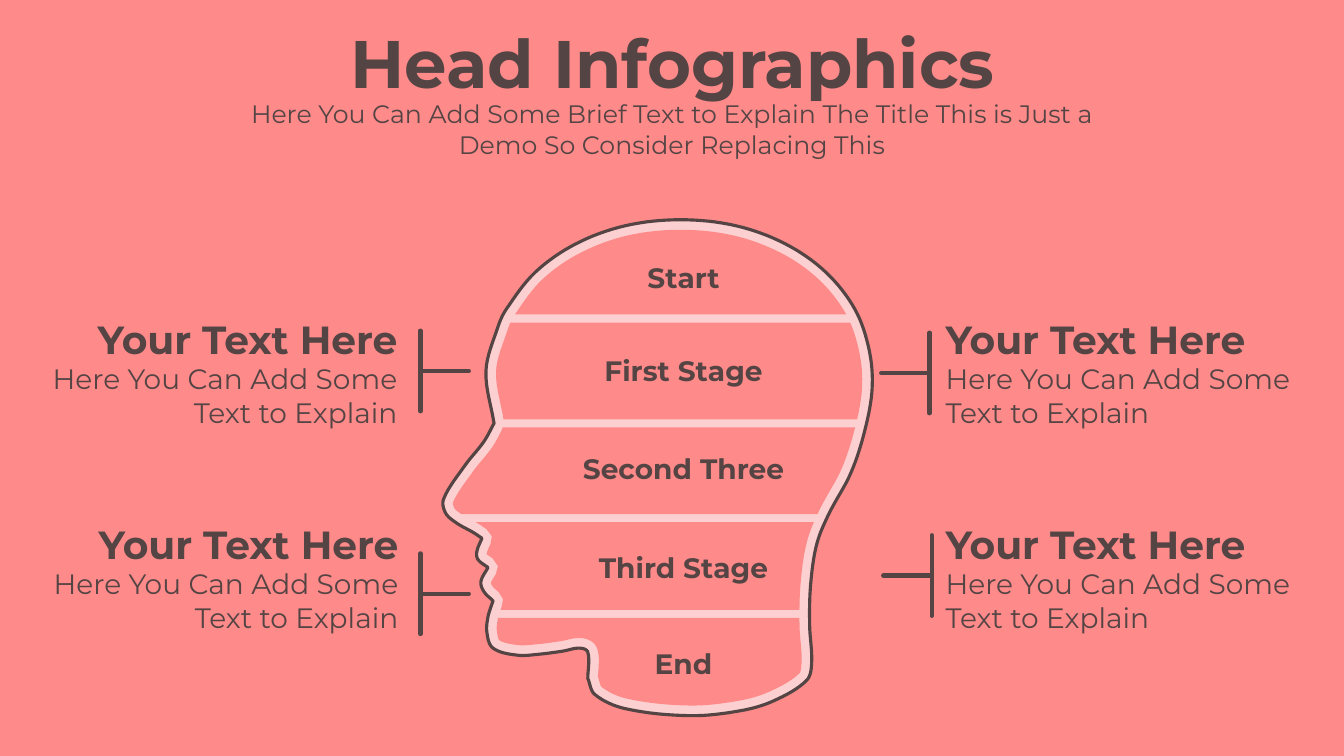
import itertools
import math

import lxml.etree
import pptx
import pptx.dml.color
import pptx.enum.shapes
import pptx.enum.text
import pptx.oxml.ns
import pptx.util

Inches = pptx.util.Inches
Align = pptx.enum.text.PP_ALIGN

WIDTH, HEIGHT = 13.33, 7.5
RIM = 0.1
SEAM_GAP = 0.08
SEAMS = [3.16, 4.2, 5.14, 6.09]
STAGES = [("Start", 2.54), ("First Stage", 3.46), ("Second Three", 4.43),
          ("Third Stage", 5.41), ("End", 6.36)]

BROW, NOSTRIL, MOUTH, CHIN_DIP = (4.9, 4.2), (4.78, 5.34), (4.84, 5.63), (4.89, 5.96)
CROWN_TOP = (6.75, 2.18)
FOREHEAD = [(4.82, 3.68), (4.94, 3.24)]
CROWN_LEFT = [(5.02, 3.07), (5.31, 2.7), (5.71, 2.42), (6.2, 2.24)]
CROWN_RIGHT = [(2 * CROWN_TOP[0] - x, y) for x, y in reversed(CROWN_LEFT)]
NAPE = [(8.62, 3.47), (8.65, 3.85), (8.58, 4.26), (8.44, 4.69), (8.22, 5.1),
        (8.1, 5.4), (8.04, 5.8), (8.03, 6.2), (8.05, 6.58)]
NECK = [(8, 6.75), (7.68, 6.95), (7.35, 7.05), (6.84, 7.1), (6.2, 7.03),
        (5.9, 6.89), (5.83, 6.73)]
JAW = [(5.83, 6.47), (5.75, 6.43), (5.58, 6.46), (5.35, 6.49), (5.13, 6.5)]
CHIN = [(4.89, 6.43), (4.83, 6.28), (4.84, 6.12)]
LOWER_LIP = [(4.8, 5.87), (4.77, 5.77)]
UPPER_LIP = [(4.74, 5.55), (4.73, 5.47)]
NOSE = [(4.69, 5.28), (4.53, 5.19), (4.42, 5.09), (4.4, 4.95), (4.61, 4.62), (4.8, 4.38)]

SMOOTH_STROKES = [
    [BROW, *FOREHEAD, *CROWN_LEFT, CROWN_TOP, *CROWN_RIGHT, *NAPE, *NECK],
    [NECK[-1], *JAW, *CHIN, CHIN_DIP],
    [CHIN_DIP, *LOWER_LIP, MOUTH],
    [MOUTH, *UPPER_LIP, NOSTRIL],
    [NOSTRIL, *NOSE, BROW],
]

CALLOUTS = [
    (0.17, 3.08, Align.RIGHT, 4.17, 3.68, 4.65),
    (9.28, 3.08, Align.LEFT, 9.22, 3.7, 8.74),
    (0.18, 5.11, Align.RIGHT, 4.17, 5.89, 4.65),
    (9.28, 5.11, Align.LEFT, 9.24, 5.71, 8.76),
]


def color(value):
    return pptx.dml.color.RGBColor.from_string(value)


def direction(start, end):
    length = math.dist(start, end)
    return (end[0] - start[0]) / length, (end[1] - start[1]) / length


def smooth(stroke, steps=8):
    padded = [stroke[0], *stroke, stroke[-1]]
    tangents = [direction(before, after) for before, after in zip(padded, padded[2:])]
    points = []
    for i, (start, end) in enumerate(itertools.pairwise(stroke)):
        reach = math.dist(start, end) / 3
        for step in range(steps):
            t = step / steps
            u = 1 - t
            points.append(tuple(
                u**3 * a + 3 * u * u * t * (a + reach * leave)
                + 3 * u * t * t * (b - reach * arrive) + t**3 * b
                for a, b, leave, arrive in zip(start, end, tangents[i], tangents[i + 1])))
    return points


def inset(outline, depth):
    moved = []
    for i, (x, y) in enumerate(outline):
        dx, dy = direction(outline[i - 1], outline[(i + 1) % len(outline)])
        moved.append((x - depth * dy, y + depth * dx))
    return [point for point in moved
            if min(math.dist(point, edge) for edge in outline) > 0.97 * depth]


def clip(outline, level, side):
    kept = []
    for start, end in zip(outline, outline[1:] + outline[:1]):
        start_inside = side * (start[1] - level) >= 0
        end_inside = side * (end[1] - level) >= 0
        if start_inside:
            kept.append(start)
        if start_inside != end_inside:
            t = (level - start[1]) / (end[1] - start[1])
            kept.append((start[0] + t * (end[0] - start[0]), level))
    return kept


class Sketch:
    font = "Montserrat"
    ink = "544444"
    coral = "FF8A8A"
    blush = "FCD0D0"

    def __init__(self, page):
        self.page = page
        page.background.fill.solid()
        page.background.fill.fore_color.rgb = color(self.coral)

    def text(self, words, left, top, width, height, size, align, bold=False):
        box = self.page.shapes.add_textbox(
            Inches(left), Inches(top), Inches(width), Inches(height))
        frame = box.text_frame
        frame.word_wrap = True
        frame.auto_size = pptx.enum.text.MSO_AUTO_SIZE.SHAPE_TO_FIT_TEXT
        para = frame.paragraphs[0]
        para.text = words
        para.alignment = align
        para.font.name = self.font
        para.font.size = pptx.util.Pt(size)
        para.font.bold = bold
        para.font.color.rgb = color(self.ink)

    def region(self, outline, fill, line_width=None):
        points = [(Inches(x), Inches(y)) for x, y in outline]
        builder = self.page.shapes.build_freeform(*points[0])
        builder.add_line_segments(points[1:], close=True)
        shape = builder.convert_to_shape()
        shape.shadow.inherit = False
        shape.fill.solid()
        shape.fill.fore_color.rgb = color(fill)
        if line_width:
            shape.line.color.rgb = color(self.ink)
            shape.line.width = pptx.util.Pt(line_width)
        else:
            shape.line.fill.background()

    def line(self, start, end):
        connector = self.page.shapes.add_connector(
            pptx.enum.shapes.MSO_CONNECTOR.STRAIGHT, *map(Inches, start + end))
        connector.line.color.rgb = color(self.ink)
        connector.line.width = pptx.util.Pt(3)
        qn = pptx.oxml.ns.qn
        properties = connector._element.spPr
        properties.find(qn("a:ln")).set("cap", "rnd")
        lxml.etree.SubElement(properties, qn("a:effectLst"))

    def head(self):
        outline = [point for stroke in SMOOTH_STROKES for point in smooth(stroke)]
        self.region(outline, self.blush, 2.25)
        interior = inset(outline, RIM)
        limits = itertools.pairwise([0, *SEAMS, HEIGHT])
        for (label, label_top), (upper, lower) in zip(STAGES, limits):
            below_seam = clip(interior, upper + SEAM_GAP / 2, 1)
            self.region(clip(below_seam, lower - SEAM_GAP / 2, -1), self.coral)
            self.text(label, 5.65, label_top, 2.26, 0.44, 20, Align.CENTER, True)

    def callout(self, left, top, align, spine, middle, tip):
        self.text("Your Text Here", left, top, 3.87, 0.57, 28, align, True)
        self.text("Here You Can Add Some Text to Explain",
                  left, top + 0.46, 3.87, 0.77, 20, align)
        for end in [(tip, middle), (spine, middle - 0.4), (spine, middle + 0.4)]:
            self.line((spine, middle), end)


def main():
    deck = pptx.Presentation()
    deck.slide_width = Inches(WIDTH)
    deck.slide_height = Inches(HEIGHT)
    sketch = Sketch(deck.slides.add_slide(deck.slide_layouts[6]))
    sketch.text("Head Infographics", 2.78, 0.16, 7.78, 0.91, 48, Align.CENTER, True)
    sketch.text("Here You Can Add Some Brief Text to Explain The Title "
                "This is Just a Demo So Consider Replacing This",
                2.3, 0.93, 8.73, 0.71, 18, Align.CENTER)
    sketch.head()
    for callout in CALLOUTS:
        sketch.callout(*callout)
    deck.save("out.pptx")


if __name__ == "__main__":
    main()
